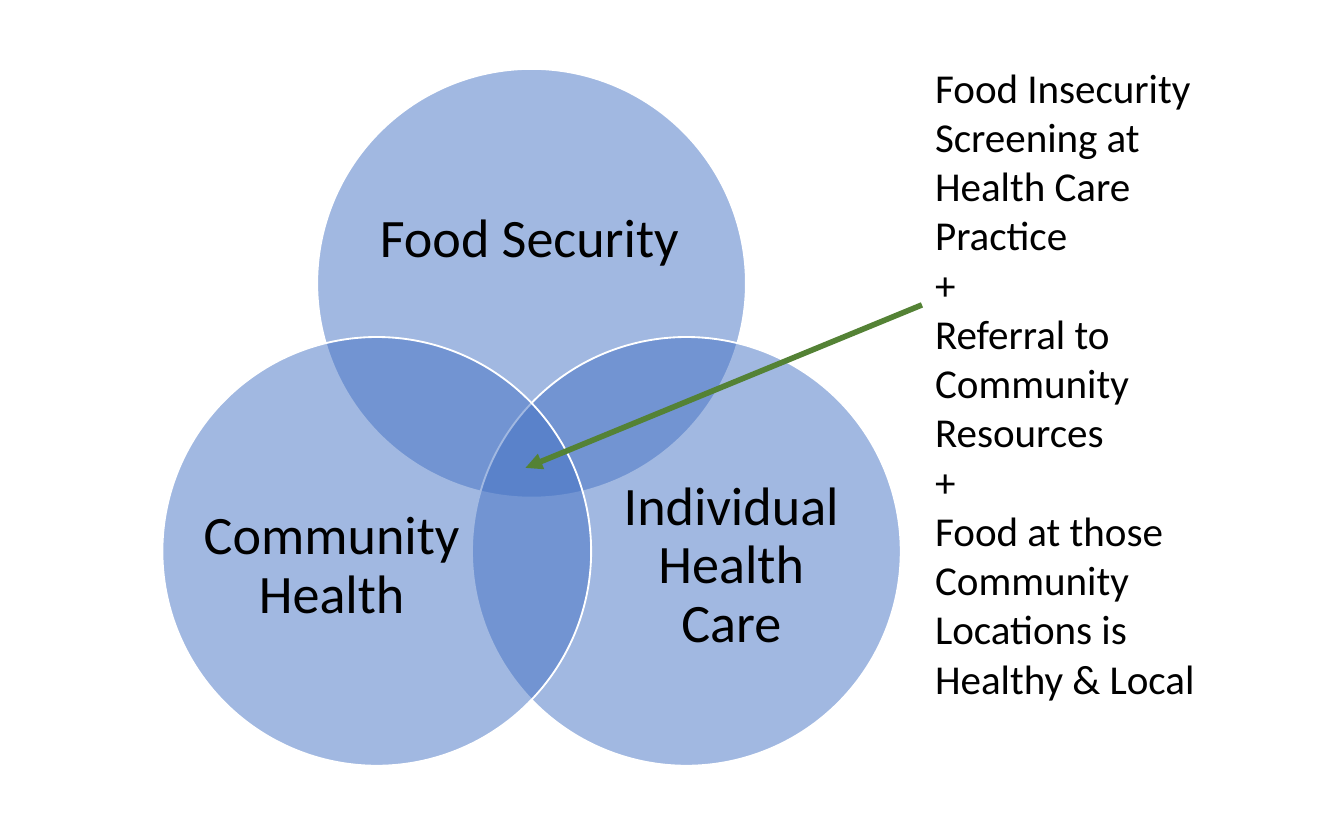
from math import cos, radians, sin

from lxml.etree import SubElement
from pptx import Presentation
from pptx.dml.color import RGBColor
from pptx.enum.shapes import MSO_CONNECTOR, MSO_SHAPE
from pptx.enum.text import MSO_ANCHOR, MSO_AUTO_SIZE, PP_ALIGN
from pptx.oxml.ns import qn
from pptx.util import Inches, Pt

BLUE = RGBColor(0x44, 0x72, 0xC4)
GREEN = RGBColor(0x54, 0x82, 0x35)
WHITE = RGBColor(0xFF, 0xFF, 0xFF)
BLACK = RGBColor(0x00, 0x00, 0x00)
FONT = "Calibri"

WIDTH, HEIGHT = Inches(10), Inches(6.25)
CENTER_X, CENTER_Y = WIDTH * 0.3955, HEIGHT * 0.55
DIAMETER = WIDTH * 0.319
ORBIT = WIDTH * 0.133

TOPICS = [
    ("Food Security", -90, (0.13, 0.175, 0.73, 0.45)),
    ("Individual Health Care", 30, (0.305, 0.26, 0.6, 0.55)),
    ("Community Health", 150, (0.095, 0.26, 0.6, 0.55)),
]
STEPS = [
    "Food Insecurity Screening at Health Care Practice",
    "+",
    "Referral to Community Resources",
    "+",
    "Food at those Community Locations is Healthy & Local",
]


def add_text(slide, box, text, size):
    """Add a wrapping text box and return its text frame."""
    frame = slide.shapes.add_textbox(*map(int, box)).text_frame
    frame.word_wrap = True
    frame.text = text
    for paragraph in frame.paragraphs:
        for run in paragraph.runs:
            run.font.name = FONT
            run.font.size = Pt(size)
            run.font.color.rgb = BLACK
    return frame


def add_circle(slide, left, top):
    """Add one half-transparent circle of the Venn diagram."""
    circle = slide.shapes.add_shape(
        MSO_SHAPE.OVAL, int(left), int(top), int(DIAMETER), int(DIAMETER))
    circle.shadow.inherit = False
    circle.fill.solid()
    circle.fill.fore_color.rgb = BLUE
    color = circle.fill._xPr.find(qn("a:solidFill"))[0]
    SubElement(color, qn("a:alpha"), val="50000")
    circle.line.color.rgb = WHITE
    circle.line.width = Pt(1)


def add_topic(slide, label, angle, area):
    """Add a circle at an angle around the centre, with its label."""
    left = CENTER_X + ORBIT * cos(radians(angle)) - DIAMETER / 2
    top = CENTER_Y + ORBIT * sin(radians(angle)) - DIAMETER / 2
    add_circle(slide, left, top)
    x, y, width, height = (share * DIAMETER for share in area)
    frame = add_text(slide, (left + x, top + y, width, height), label, 29)
    frame.margin_left = frame.margin_right = 0
    frame.margin_top = frame.margin_bottom = 0
    frame.vertical_anchor = MSO_ANCHOR.MIDDLE
    frame.paragraphs[0].alignment = PP_ALIGN.CENTER
    frame.paragraphs[0].line_spacing = 0.9


def add_arrow(slide, start, end):
    """Add a green arrow between two points."""
    arrow = slide.shapes.add_connector(
        MSO_CONNECTOR.STRAIGHT, *map(int, (*start, *end)))
    arrow.line.color.rgb = GREEN
    arrow.line.width = Pt(3)
    SubElement(arrow.line._get_or_add_ln(), qn("a:tailEnd"), type="triangle")
    SubElement(arrow._element.spPr, qn("a:effectLst"))


def main():
    """Build the slide and save it."""
    presentation = Presentation()
    presentation.slide_width, presentation.slide_height = WIDTH, HEIGHT
    slide = presentation.slides.add_slide(presentation.slide_layouts[6])
    for label, angle, area in TOPICS:
        add_topic(slide, label, angle, area)
    steps_left = WIDTH * 0.686
    add_arrow(slide, (steps_left, HEIGHT * 0.363),
              (WIDTH * 0.391, HEIGHT * 0.557))
    steps_box = (steps_left, HEIGHT * 0.066, WIDTH * 0.26, HEIGHT * 0.786)
    steps = add_text(slide, steps_box, "\n".join(STEPS), 22)
    steps.auto_size = MSO_AUTO_SIZE.SHAPE_TO_FIT_TEXT
    presentation.save("out.pptx")


if __name__ == "__main__":
    main()
